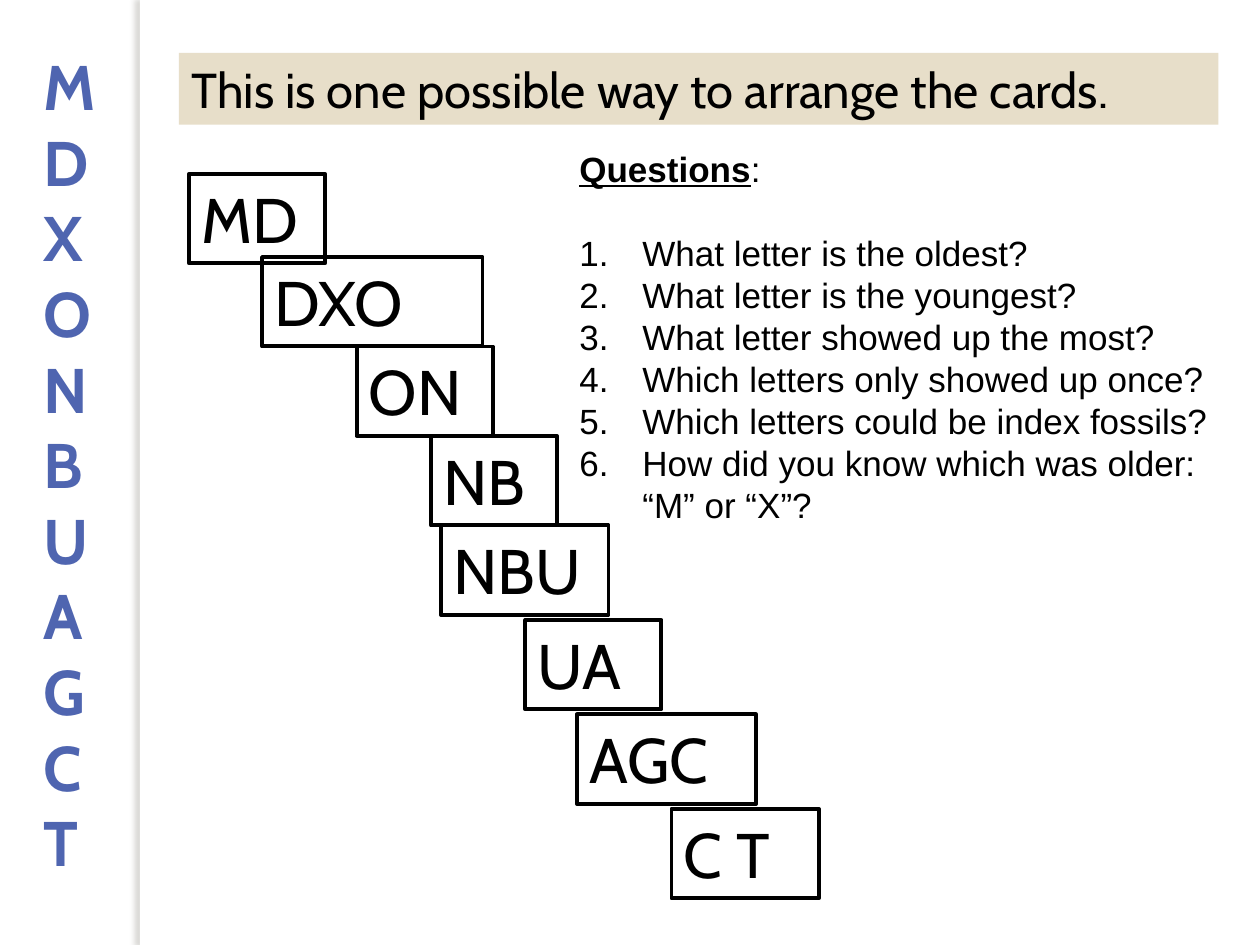
from typing import NamedTuple

from lxml.etree import SubElement
from pptx import Presentation
from pptx.dml.color import RGBColor
from pptx.enum.shapes import MSO_SHAPE
from pptx.enum.text import MSO_ANCHOR, PP_ALIGN
from pptx.oxml.ns import qn
from pptx.util import Emu, Inches, Pt

BLACK = "000000"
CARD_HEIGHT = 0.71


class Card(NamedTuple):
    letters: str
    left: float
    top: float
    width: float


# Oldest to youngest layer, from the bottom of the stack up
CARDS = [
    Card("C T", 6.42 - 1.09, 6.42, 1.17),
    Card("AGC", 4.58, 5.67, 1.42),
    Card("UA", 4.17, 4.92, 1.08),
    Card("NBU", 3.5, 4.17, 1.33),
    Card("NB", 3.42, 3.46, 1),
    Card("ON", 2.83, 2.75, 1.08),
    Card("DXO", 2.08, 2.04, 1.75),
    Card("MD", 1.5, 1.38, 1.08),
]

QUESTIONS = [
    "What letter is the oldest?",
    "What letter is the youngest?",
    "What letter showed up the most?",
    "Which letters only showed up once?",
    "Which letters could be index fossils?",
    "How did you know which was older: “M” or “X”?",
]


def color(hex_code: str) -> RGBColor:
    return RGBColor.from_string(hex_code)


def style(paragraph, font_name: str, size: float, hex_code: str = BLACK) -> None:
    paragraph.alignment = PP_ALIGN.LEFT
    paragraph.font.name = font_name
    paragraph.font.size = Pt(size)
    paragraph.font.color.rgb = color(hex_code)


def add_box(slide, left: float, top: float, width: float, height: float,
            fill: str | None = None, outline: str | None = None):
    box = slide.shapes.add_shape(MSO_SHAPE.RECTANGLE, Inches(left), Inches(top),
                                 Inches(width), Inches(height))
    box.shadow.inherit = False
    if fill:
        box.fill.solid()
        box.fill.fore_color.rgb = color(fill)
    else:
        box.fill.background()
    if outline:
        box.line.color.rgb = color(outline)
        box.line.width = Pt(2.25)
    else:
        box.line.fill.background()
    return box


def write_label(box, text: str, size: float) -> None:
    frame = box.text_frame
    frame.word_wrap = True
    frame.vertical_anchor = MSO_ANCHOR.TOP
    frame.text = text
    style(frame.paragraphs[0], "Cabin", size)


def add_text_frame(slide, left: float, top: float, width: float, height: float):
    frame = slide.shapes.add_textbox(Inches(left), Inches(top), Inches(width),
                                     Inches(height)).text_frame
    frame.word_wrap = True
    return frame


def cast_shadow_left(box) -> None:
    effects = box._element.spPr.find(qn("a:effectLst"))
    shadow = SubElement(effects, qn("a:outerShdw"), blurRad=str(Pt(3)),
                        dist=str(Pt(3)), dir="10800000", rotWithShape="0")
    tint = SubElement(shadow, qn("a:srgbClr"), val="736F63")
    SubElement(tint, qn("a:alpha"), val="25000")


def number(paragraph, indent: Emu) -> None:
    properties = paragraph._p.get_or_add_pPr()
    properties.set("marL", str(indent))
    properties.set("indent", str(-indent))
    SubElement(properties, qn("a:buFont"), typeface="+mj-lt")
    SubElement(properties, qn("a:buAutoNum"), type="arabicPeriod")


def add_sequence(slide, letters: str) -> None:
    frame = add_text_frame(slide, 0.25, 0.33, 0.92, 6.77)
    frame.text = "\n".join(letters)
    for paragraph in frame.paragraphs:
        style(paragraph, "Cabin", 36, "4F65B0")
        paragraph.font.bold = True


def add_questions(slide) -> None:
    frame = add_text_frame(slide, 4.5, 1.12, 5.33, 3.13)
    heading = frame.paragraphs[0]
    title = heading.add_run()
    title.text = "Questions"
    title.font.bold = True
    title.font.underline = True
    heading.add_run().text = ":"
    heading.space_after = Pt(24)
    for question in QUESTIONS:
        item = frame.add_paragraph()
        item.text = question
        number(item, Inches(0.5))
    for paragraph in frame.paragraphs:
        style(paragraph, "Arial", 20)
        paragraph.line_spacing = Pt(24)


def main() -> None:
    presentation = Presentation()
    presentation.slide_width = Inches(10)
    presentation.slide_height = Inches(7.5)
    slide = presentation.slides.add_slide(presentation.slide_layouts[6])

    # Sidebar edge and the full letter sequence
    cast_shadow_left(add_box(slide, 1.11, 0, 0.08, 7.5, fill="FFFFFF"))
    add_sequence(slide, "MDXONBUAGCT")

    # Staircase of cards
    for card in CARDS:
        box = add_box(slide, card.left, card.top, card.width, CARD_HEIGHT, outline=BLACK)
        write_label(box, card.letters, 36)

    # Title banner
    banner = add_box(slide, 1.42, 0.42, 8.25, 0.57, fill="E7DEC9")
    write_label(banner, "This is one possible way to arrange the cards.", 28)

    # Numbered questions
    add_questions(slide)

    presentation.save("out.pptx")


if __name__ == "__main__":
    main()
